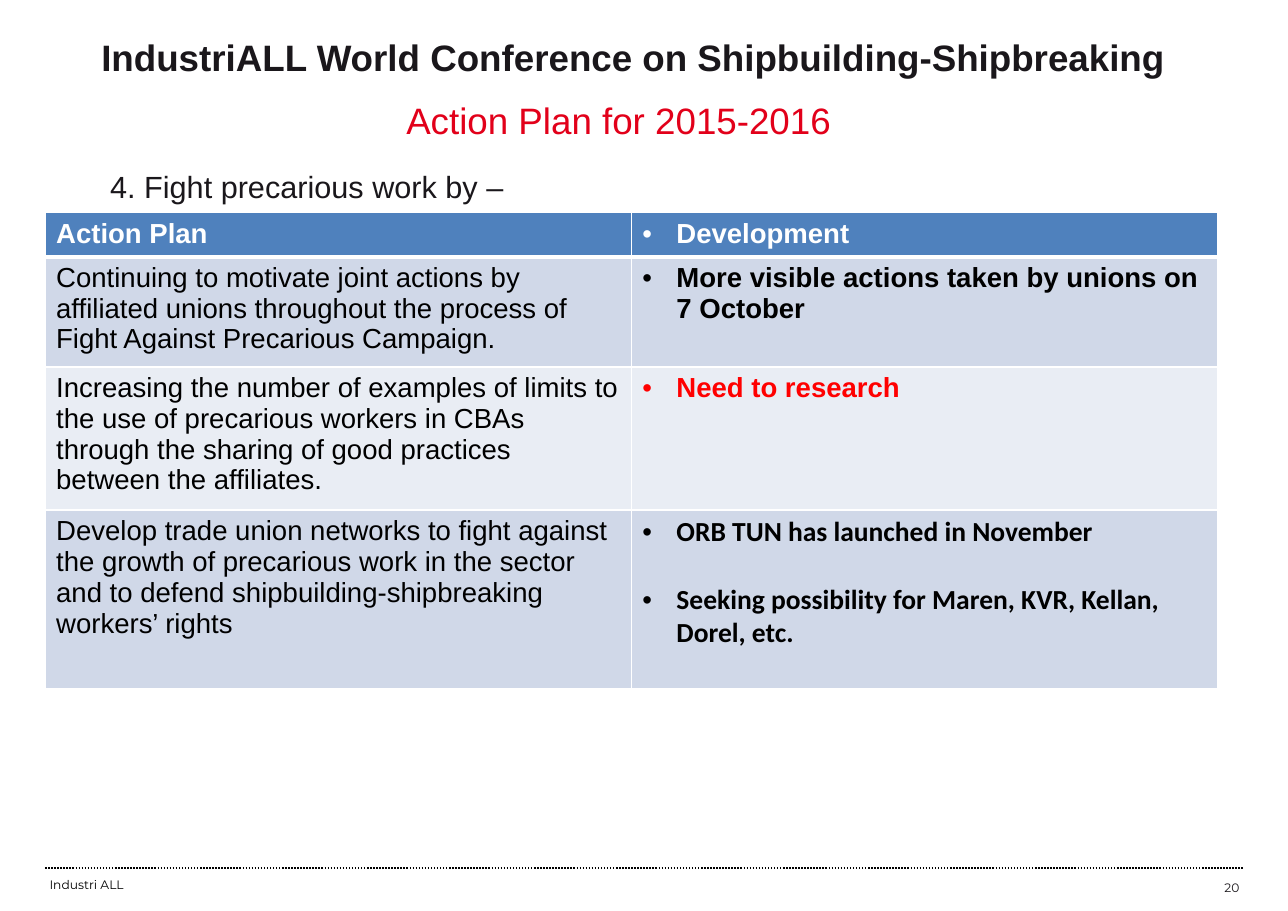
from dataclasses import dataclass

from lxml import etree
from pptx import Presentation
from pptx.dml.color import RGBColor
from pptx.enum.dml import MSO_LINE
from pptx.enum.shapes import MSO_CONNECTOR
from pptx.enum.text import MSO_ANCHOR, PP_ALIGN
from pptx.oxml import parse_xml
from pptx.oxml.ns import nsdecls, qn
from pptx.slide import Slide
from pptx.table import _Cell
from pptx.text.text import _Paragraph
from pptx.util import Inches, Pt

BLACK = RGBColor(0x00, 0x00, 0x00)
WHITE = RGBColor(0xFF, 0xFF, 0xFF)
INK = RGBColor(0x1A, 0x17, 0x1B)
CRIMSON = RGBColor(0xE2, 0x00, 0x1A)
RED = RGBColor(0xFF, 0x00, 0x00)
HEADER_BLUE = RGBColor(0x4F, 0x81, 0xBD)
BAND_DARK = RGBColor(0xD0, 0xD8, 0xE8)
BAND_LIGHT = RGBColor(0xE9, 0xED, 0xF4)

LEFT, CENTER = PP_ALIGN.LEFT, PP_ALIGN.CENTER
RIGHT, JUSTIFY = PP_ALIGN.RIGHT, PP_ALIGN.JUSTIFY
TOP, MIDDLE = MSO_ANCHOR.TOP, MSO_ANCHOR.MIDDLE
DOTTED = MSO_LINE.ROUND_DOT
STRAIGHT = MSO_CONNECTOR.STRAIGHT

TABLE_LEFT, TABLE_TOP, COLUMN_WIDTH = 0.41, 1.93, 5.32
BULLET_INDENT = Inches(0.31)


@dataclass
class Label:
    text: str
    left: float
    top: float
    width: float
    height: float
    size: float
    color: RGBColor = INK
    font: str = "Arial"
    bold: bool = False
    align: PP_ALIGN = LEFT
    anchor: MSO_ANCHOR = MIDDLE


@dataclass
class ActionRow:
    action: str
    developments: list[str]
    height: float
    fill: RGBColor
    action_color: RGBColor = BLACK
    development_color: RGBColor = BLACK
    action_bold: bool = False
    development_font: str = "Arial"
    bottom_border: float = 1


LABELS = [
    Label("Industri ALL", 0.34, 7.95, 6.06, 0.17, 8, BLACK, "Montserrat"),
    Label("IndustriALL World Conference on Shipbuilding-Shipbreaking",
          0.81, 0.12, 10.24, 0.8, 24, bold=True),
    Label("Action Plan for 2015-2016", 2.15, 0.83, 6.93, 0.6, 24, CRIMSON,
          align=CENTER, anchor=TOP),
    Label("4. Fight precarious work by –", 0.89, 1.46, 8.19, 0.55, 20,
          align=JUSTIFY, anchor=TOP),
    Label("20", 8.63, 7.96, 2.73, 0.19, 8, font="Montserrat", align=RIGHT),
]

ROWS = [
    ActionRow("Action Plan", ["Development"], 0.39, HEADER_BLUE, WHITE, WHITE,
              action_bold=True, bottom_border=3),
    ActionRow("Continuing to motivate joint actions by affiliated unions "
              "throughout the process of Fight Against Precarious Campaign.",
              ["More visible actions taken by unions on 7 October"],
              0.94, BAND_DARK),
    ActionRow("Increasing the number of examples of limits to the use of "
              "precarious workers in CBAs through the sharing of good "
              "practices between the affiliates.",
              ["Need to research"], 1.22, BAND_LIGHT, development_color=RED),
    ActionRow("Develop trade union networks to fight against the growth of "
              "precarious work in the sector and to defend "
              "shipbuilding-shipbreaking workers’ rights",
              ["ORB TUN has launched in November",
               "Seeking possibility for Maren, KVR, Kellan, Dorel, etc."],
              1.62, BAND_DARK, development_font="Calibri"),
]


def write_text(paragraph: _Paragraph, text: str, size: float, color: RGBColor,
               font: str, bold: bool) -> None:
    run = paragraph.add_run()
    run.text = text
    formats = {"size": Pt(size), "name": font, "bold": bold}
    for name, value in formats.items():
        setattr(run.font, name, value)
    run.font.color.rgb = color


def add_label(slide: Slide, label: Label) -> None:
    shape = slide.shapes.add_textbox(
        Inches(label.left), Inches(label.top),
        Inches(label.width), Inches(label.height))
    frame = shape.text_frame
    formats = {
        "word_wrap": True, "vertical_anchor": label.anchor,
        "margin_left": Inches(0.11), "margin_right": Inches(0.11),
        "margin_top": Inches(0.06), "margin_bottom": Inches(0.06),
    }
    for name, value in formats.items():
        setattr(frame, name, value)
    paragraph = frame.paragraphs[0]
    paragraph.alignment = label.align
    write_text(paragraph, label.text, label.size, label.color,
               label.font, label.bold)


def add_bullet(paragraph: _Paragraph) -> None:
    properties = paragraph._p.get_or_add_pPr()
    properties.set("marL", str(BULLET_INDENT))
    properties.set("indent", str(-BULLET_INDENT))
    etree.SubElement(properties, qn("a:buFont")).set("typeface", "Arial")
    etree.SubElement(properties, qn("a:buChar")).set("char", "•")


def style_cell(cell: _Cell, fill: RGBColor, top: float, bottom: float) -> None:
    properties = cell._tc.get_or_add_tcPr()
    borders = {"lnL": 1, "lnR": 1, "lnT": top, "lnB": bottom}
    for side, width in borders.items():
        properties.append(parse_xml(
            f'<a:{side} {nsdecls("a")} w="{Pt(width)}"><a:solidFill>'
            f'<a:srgbClr val="{WHITE}"/></a:solidFill></a:{side}>'))
    cell.fill.solid()
    cell.fill.fore_color.rgb = fill


def add_action_table(slide: Slide) -> None:
    table = slide.shapes.add_table(
        len(ROWS), 2, Inches(TABLE_LEFT), Inches(TABLE_TOP),
        Inches(2 * COLUMN_WIDTH), Inches(sum(row.height for row in ROWS))).table
    for column in table.columns:
        column.width = Inches(COLUMN_WIDTH)
    top_border = 1
    for index, row in enumerate(ROWS):
        table.rows[index].height = Inches(row.height)
        action, development = table.cell(index, 0), table.cell(index, 1)
        for cell in (action, development):
            style_cell(cell, row.fill, top_border, row.bottom_border)
        top_border = row.bottom_border
        write_text(action.text_frame.paragraphs[0], row.action, 18,
                   row.action_color, "Arial", row.action_bold)
        frame = development.text_frame
        for position, text in enumerate(row.developments):
            paragraph = frame.add_paragraph() if position else frame.paragraphs[0]
            if position:
                paragraph.space_before = Pt(22)
            add_bullet(paragraph)
            write_text(paragraph, text, 18, row.development_color,
                       row.development_font, True)


def add_footer_rule(slide: Slide) -> None:
    rule = slide.shapes.add_connector(
        STRAIGHT, Inches(0.41), Inches(7.88), Inches(11.28), Inches(7.88))
    rule.line.color.rgb = BLACK
    rule.line.width = Pt(1)
    rule.line.dash_style = DOTTED
    etree.SubElement(rule._element.spPr, qn("a:effectLst"))


def main() -> None:
    presentation = Presentation()
    presentation.slide_width = Inches(11.69)
    presentation.slide_height = Inches(8.27)
    slide = presentation.slides.add_slide(presentation.slide_layouts[6])
    add_footer_rule(slide)
    for label in LABELS:
        add_label(slide, label)
    add_action_table(slide)
    presentation.save("out.pptx")


if __name__ == "__main__":
    main()
